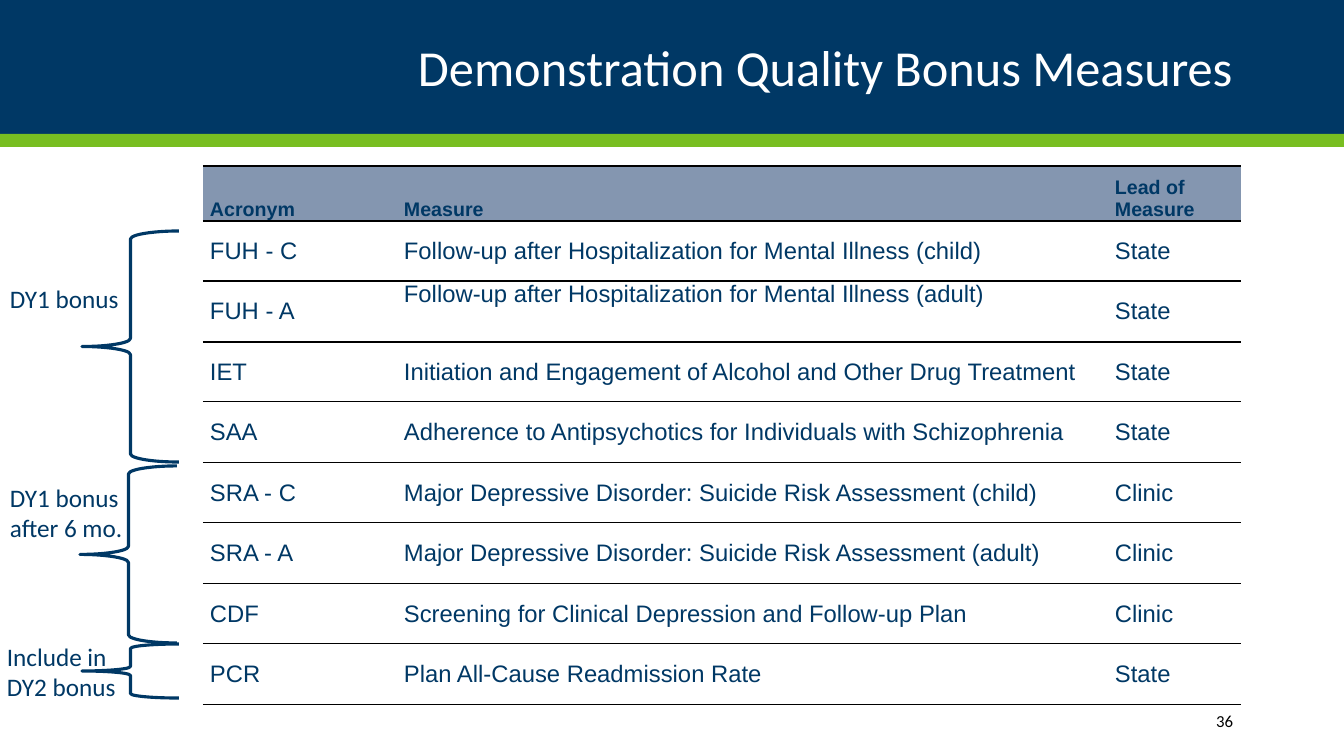
import lxml.etree
import pptx
import pptx.dml.color
import pptx.enum.shapes
import pptx.enum.text
import pptx.oxml
import pptx.oxml.ns
import pptx.util

PX = 914400 / 100.8
NAVY, GREEN, SLATE, WHITE, BLACK = "003865", "78BE21", "8496B0", "FFFFFF", "000000"
ANCHOR = pptx.enum.text.MSO_ANCHOR
ALIGN = pptx.enum.text.PP_ALIGN
SHAPE = pptx.enum.shapes.MSO_SHAPE
rgb = pptx.dml.color.RGBColor.from_string


def px(*lengths):
    return [pptx.util.Emu(round(length * PX)) for length in lengths]


def add_text(lines, box, size, color, align=ALIGN.LEFT, anchor=ANCHOR.TOP, spacing=1.0):
    frame = slide.shapes.add_textbox(*px(*box)).text_frame
    frame.word_wrap = True
    frame.vertical_anchor = anchor
    frame.text = "\n".join(lines)
    for paragraph in frame.paragraphs:
        paragraph.alignment = align
        paragraph.line_spacing = spacing
        paragraph.font.name = "Calibri"
        paragraph.font.size = pptx.util.Pt(size)
        paragraph.font.color.rgb = rgb(color)


deck = pptx.Presentation()
deck.slide_width, deck.slide_height = px(1344, 756)
slide = deck.slides.add_slide(deck.slide_layouts[6])

for top, height, color in [(0, 134, NAVY), (134, 13, GREEN)]:
    band = slide.shapes.add_shape(SHAPE.RECTANGLE, *px(0, top, 1344, height))
    band.shadow.inherit = False
    band.fill.solid()
    band.fill.fore_color.rgb = rgb(color)
    band.line.fill.background()

add_text(["Demonstration Quality Bonus Measures"], (101, 20, 1142, 101), 36, WHITE,
         ALIGN.RIGHT, ANCHOR.MIDDLE, 0.9)

measures = [
    ("Acronym", "Measure", "Lead of Measure"),
    ("FUH - C", "Follow-up after Hospitalization for Mental Illness (child)", "State"),
    ("FUH - A", "Follow-up after Hospitalization for Mental Illness (adult)", "State"),
    ("IET", "Initiation and Engagement of Alcohol and Other Drug Treatment", "State"),
    ("SAA", "Adherence to Antipsychotics for Individuals with Schizophrenia", "State"),
    ("SRA - C", "Major Depressive Disorder: Suicide Risk Assessment (child)", "Clinic"),
    ("SRA - A", "Major Depressive Disorder: Suicide Risk Assessment (adult)", "Clinic"),
    ("CDF", "Screening for Clinical Depression and Follow-up Plan", "Clinic"),
    ("PCR", "Plan All-Cause Readmission Rate", "State"),
]
column_widths = [194, 711, 133]
row_heights = [55] + [60, 61] * 4
table = slide.shapes.add_table(
    len(measures), len(column_widths),
    *px(203, 166, sum(column_widths), sum(row_heights))).table
table.first_row = False
table.horz_banding = False
for column, width in zip(table.columns, px(*column_widths)):
    column.width = width
for row, height in zip(table.rows, px(*row_heights)):
    row.height = height

no_line = "<a:noFill/>"
black_line = f'<a:solidFill><a:srgbClr val="{BLACK}"/></a:solidFill>'
borders = [("lnL", no_line), ("lnR", no_line), ("lnT", black_line), ("lnB", black_line)]
for row_index, measure in enumerate(measures):
    is_header = row_index == 0
    for column_index, wording in enumerate(measure):
        cell = table.cell(row_index, column_index)
        cell.text = wording
        cell.margin_left, cell.margin_right, cell.margin_top, cell.margin_bottom = px(7, 7, 0, 0)
        cell.vertical_anchor = ANCHOR.BOTTOM if is_header else ANCHOR.MIDDLE
        if is_header:
            cell.fill.solid()
            cell.fill.fore_color.rgb = rgb(SLATE)
        else:
            cell.fill.background()
        paragraph = cell.text_frame.paragraphs[0]
        paragraph.space_before = paragraph.space_after = pptx.util.Pt(2)
        paragraph.font.name = "Arial"
        paragraph.font.size = pptx.util.Pt(14 if is_header else 17)
        paragraph.font.bold = is_header
        paragraph.font.color.rgb = rgb(NAVY)
        properties = cell._tc.get_or_add_tcPr()
        for position, (side, paint) in enumerate(borders):
            properties.insert(position, pptx.oxml.parse_xml(
                f'<a:{side} {pptx.oxml.ns.nsdecls("a")} w="12700">{paint}</a:{side}>'))
table.cell(2, 1).vertical_anchor = ANCHOR.TOP

add_text(["36"], (1092, 701, 151, 40), 12, BLACK, ALIGN.RIGHT, ANCHOR.MIDDLE)

bonuses = [
    (["DY1 bonus"], (0, 278, 140, 40), (82, 231, 97, 231)),
    (["DY1 bonus", "after 6 mo."], (0, 477, 140, 72), (80, 466, 97, 177)),
    (["Include in", "DY2 bonus"], (-3, 636, 140, 72), (82, 644, 97, 54)),
]
for label, label_box, brace_box in bonuses:
    brace = slide.shapes.add_shape(SHAPE.LEFT_BRACE, *px(*brace_box))
    brace.shadow.inherit = False
    brace.fill.background()
    brace.line.color.rgb = rgb(NAVY)
    brace.line.width = pptx.util.Pt(2.25)
    add_text(label, label_box, 18, NAVY)

deck.save("out.pptx")
